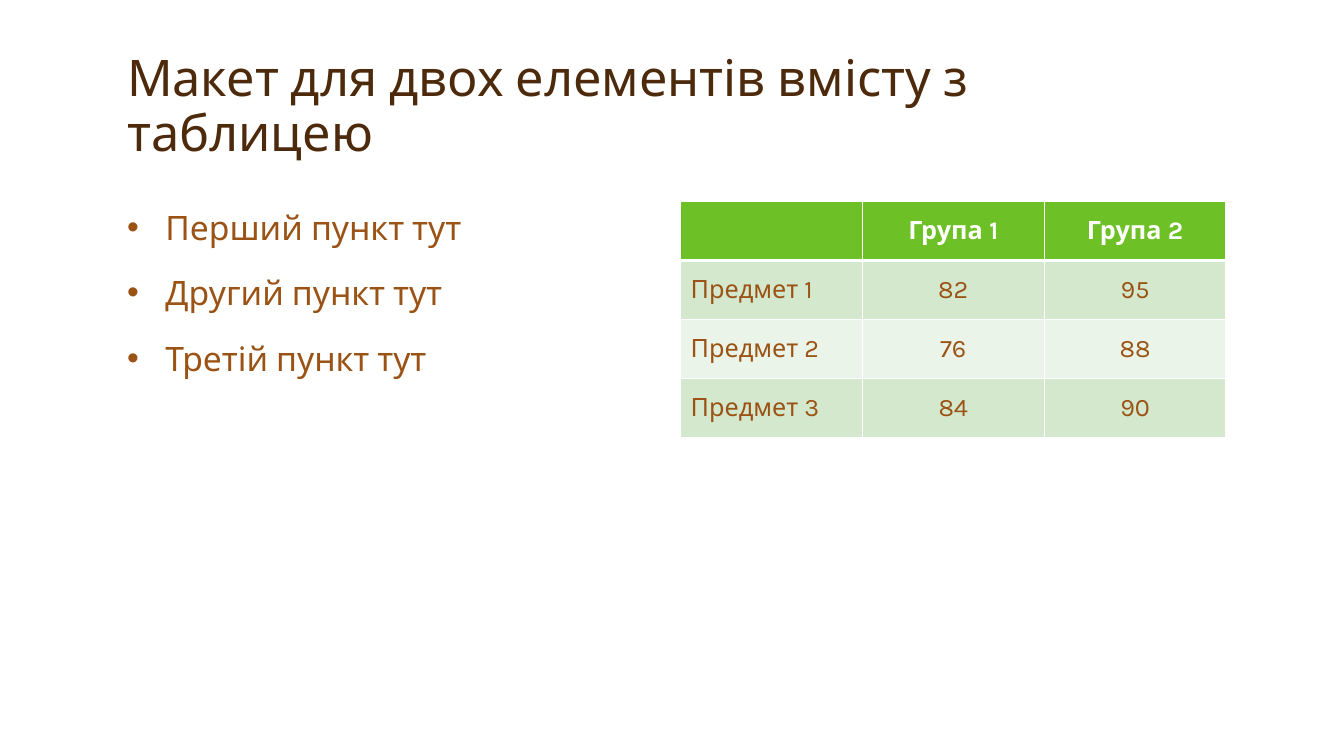
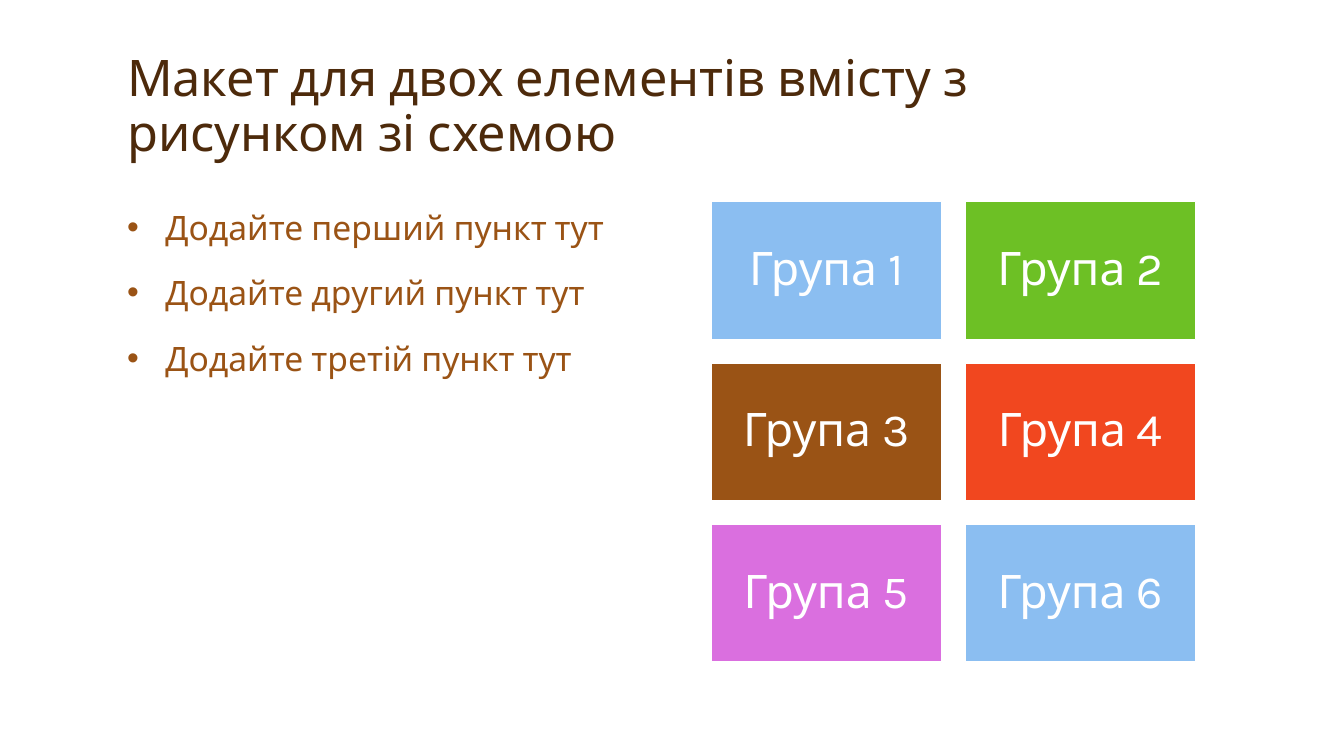
from dataclasses import dataclass

from lxml import etree
from pptx import Presentation
from pptx.dml.color import RGBColor
from pptx.enum.shapes import MSO_SHAPE
from pptx.enum.text import MSO_ANCHOR, MSO_AUTO_SIZE, PP_ALIGN
from pptx.oxml.ns import qn
from pptx.util import Inches, Pt

LEFT, CENTER = PP_ALIGN.LEFT, PP_ALIGN.CENTER
TOP, MIDDLE, BOTTOM = MSO_ANCHOR.TOP, MSO_ANCHOR.MIDDLE, MSO_ANCHOR.BOTTOM
NO_AUTOFIT = MSO_AUTO_SIZE.NONE
RECTANGLE = MSO_SHAPE.RECTANGLE


@dataclass(frozen=True)
class Theme:
    font: str = "Karla"
    heading: str = "4D2A0B"
    text: str = "9A5315"
    white: str = "FFFFFF"
    blue: str = "8BBEF1"
    green: str = "6DC025"
    red: str = "F1471F"
    violet: str = "DA6FDF"
    band_dark: str = "D4E8CD"
    band_light: str = "EBF4E8"
    title_size: int = 36
    tile_size: int = 33
    list_size: int = 24
    table_size: int = 18


THEME = Theme()

# Page grid, in inches
SLIDE_WIDTH, SLIDE_HEIGHT = 13.33, 7.5
MARGIN = 1.16
CONTENT_TOP = 2
TITLE_BOX = (MARGIN, 0.33, 11, 1.33)
LIST_BOX = (MARGIN, CONTENT_TOP, 5.42, 4.58)
TABLE_BOX = (6.75, CONTENT_TOP, 5.41, 2.34)
TILE_LEFT, TILE_WIDTH, TILE_HEIGHT, TILE_GAP = 7.05, 2.29, 1.37, 0.23
TILE_COLUMNS = 2
BULLET_INDENT = 0.38


def color(value):
    return RGBColor.from_string(value)


def place(shape, box):
    shape.left, shape.top, shape.width, shape.height = map(Inches, box)


def add_bullet(paragraph):
    properties = paragraph._p.get_or_add_pPr()
    properties.set("marL", str(Inches(BULLET_INDENT)))
    properties.set("indent", str(-Inches(BULLET_INDENT)))
    etree.SubElement(properties, qn("a:buFont")).set("typeface", "Arial")
    etree.SubElement(properties, qn("a:buChar")).set("char", "•")


def write_text(frame, lines, *, size, fill, bold=False, align=LEFT,
               line_spacing=1.0, gap=0, bullets=False):
    """Fill a text frame with one paragraph for each line."""
    for index, line in enumerate(lines):
        paragraph = frame.add_paragraph() if index else frame.paragraphs[0]
        if bullets:
            add_bullet(paragraph)
        paragraph.alignment = align
        paragraph.line_spacing = line_spacing
        paragraph.space_before = Pt(gap if index else 0)
        run = paragraph.add_run()
        run.text = line
        run.font.name = THEME.font
        run.font.size = Pt(size)
        run.font.bold = bold
        run.font.color.rgb = color(fill)


def set_frame(frame, anchor):
    frame.word_wrap = True
    frame.auto_size = NO_AUTOFIT
    frame.vertical_anchor = anchor


def add_content_slide(presentation, title, items):
    """Add a slide with a title and a bulleted list on the left."""
    slide = presentation.slides.add_slide(presentation.slide_layouts[1])
    heading, body = slide.shapes.title, slide.placeholders[1]
    place(heading, TITLE_BOX)
    set_frame(heading.text_frame, BOTTOM)
    write_text(heading.text_frame, [title], size=THEME.title_size,
               fill=THEME.heading, line_spacing=0.9)
    place(body, LIST_BOX)
    set_frame(body.text_frame, TOP)
    write_text(body.text_frame, items, size=THEME.list_size,
               fill=THEME.text, gap=18, bullets=True)
    return slide


def set_borders(cell, top, bottom):
    """Draw white cell borders; must run before the cell is filled."""
    properties = cell._tc.get_or_add_tcPr()
    widths = {"a:lnL": 1, "a:lnR": 1, "a:lnT": top, "a:lnB": bottom}
    for tag, width in widths.items():
        line = etree.SubElement(properties, qn(tag), w=str(Pt(width)))
        solid = etree.SubElement(line, qn("a:solidFill"))
        etree.SubElement(solid, qn("a:srgbClr"), val=THEME.white)


def add_table(slide, rows):
    table = slide.shapes.add_table(
        len(rows), len(rows[0]), *map(Inches, TABLE_BOX)).table
    bands = (THEME.band_light, THEME.band_dark)
    for row_index, row in enumerate(rows):
        header = row_index == 0
        for column_index, value in enumerate(row):
            cell = table.cell(row_index, column_index)
            set_borders(cell, top=3 if row_index == 1 else 1,
                        bottom=3 if header else 1)
            cell.fill.solid()
            cell.fill.fore_color.rgb = color(
                THEME.green if header else bands[row_index % 2])
            cell.vertical_anchor = MIDDLE
            if value:
                write_text(cell.text_frame, [value], size=THEME.table_size,
                           fill=THEME.white if header else THEME.text,
                           bold=header,
                           align=CENTER if column_index else LEFT)


def add_tile(slide, box, label, fill):
    tile = slide.shapes.add_shape(RECTANGLE, *map(Inches, box))
    tile.shadow.inherit = False
    tile.fill.solid()
    tile.fill.fore_color.rgb = color(fill)
    tile.line.color.rgb = color(THEME.white)
    tile.line.width = Pt(1)
    frame = tile.text_frame
    set_frame(frame, MIDDLE)
    frame.margin_left = frame.margin_right = Inches(0.14)
    frame.margin_top = frame.margin_bottom = Inches(0.14)
    write_text(frame, [label], size=THEME.tile_size, fill=THEME.white,
               align=CENTER, line_spacing=0.9)


def add_tile_grid(slide, fills):
    for index, fill in enumerate(fills):
        row, column = divmod(index, TILE_COLUMNS)
        box = (TILE_LEFT + column * (TILE_WIDTH + TILE_GAP),
               CONTENT_TOP + row * (TILE_HEIGHT + TILE_GAP),
               TILE_WIDTH, TILE_HEIGHT)
        add_tile(slide, box, f"Група {index + 1}", fill)


def main():
    presentation = Presentation()
    presentation.slide_width = Inches(SLIDE_WIDTH)
    presentation.slide_height = Inches(SLIDE_HEIGHT)

    # List with a table
    slide = add_content_slide(
        presentation, "Макет для двох елементів вмісту з таблицею",
        ["Перший пункт тут", "Другий пункт тут", "Третій пункт тут"])
    add_table(slide, [
        ("", "Група 1", "Група 2"),
        ("Предмет 1", "82", "95"),
        ("Предмет 2", "76", "88"),
        ("Предмет 3", "84", "90"),
    ])

    # List with a grid of tiles
    slide = add_content_slide(
        presentation, "Макет для двох елементів вмісту з рисунком зі схемою",
        ["Додайте перший пункт тут", "Додайте другий пункт тут",
         "Додайте третій пункт тут"])
    add_tile_grid(slide, [THEME.blue, THEME.green, THEME.text,
                          THEME.red, THEME.violet, THEME.blue])

    presentation.save("out.pptx")


if __name__ == "__main__":
    main()
